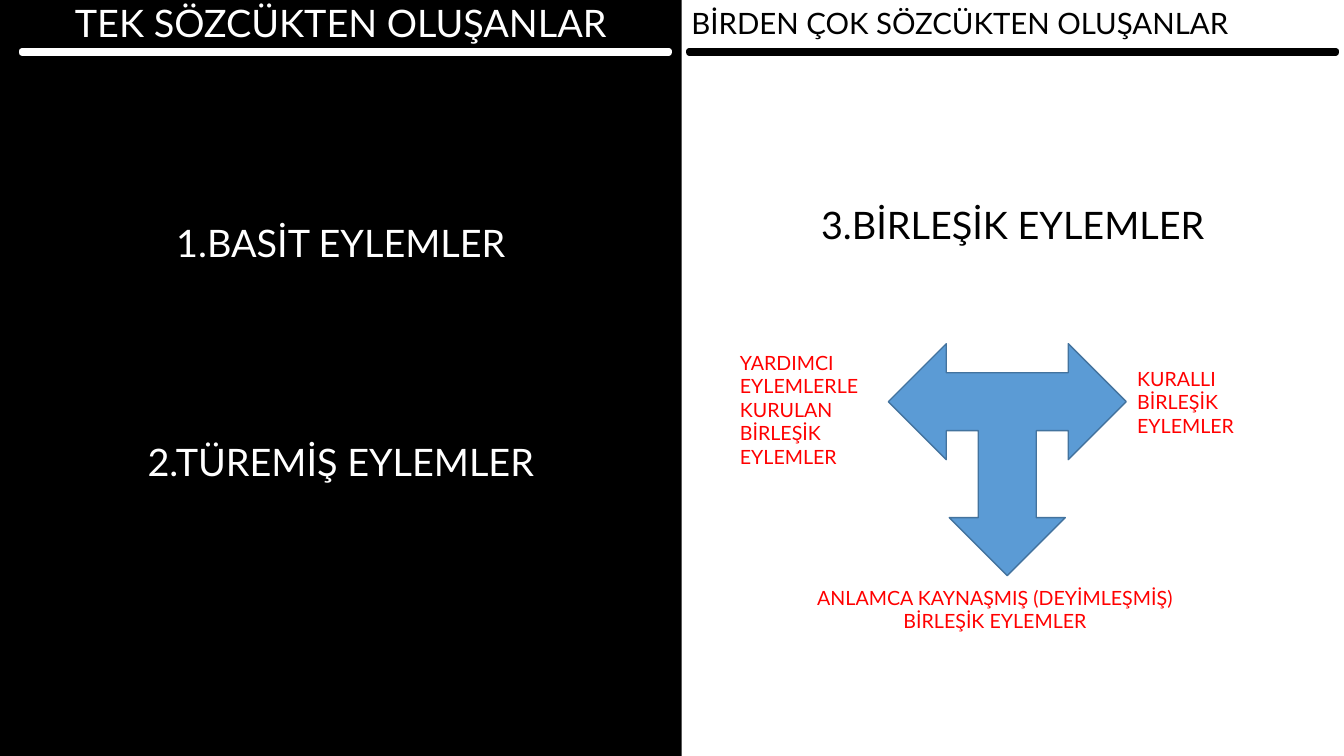
from pptx import Presentation
from pptx.dml.color import RGBColor
from pptx.enum.shapes import MSO_SHAPE
from pptx.enum.text import MSO_ANCHOR, MSO_AUTO_SIZE, PP_ALIGN
from pptx.util import Inches, Pt

FONT = "Lato"
BLACK, WHITE, RED = "000000", "FFFFFF", "FF0000"
ARROW_BLUE, ARROW_EDGE = "5B9BD5", "43739E"
LEFT, CENTER = PP_ALIGN.LEFT, PP_ALIGN.CENTER


def rgb(color):
    return RGBColor.from_string(color)


def write(shape, lines, color):
    """Each line is (text, size, alignment, line spacing, points before)."""
    tf = shape.text_frame
    frame_format = {"word_wrap": True, "auto_size": MSO_AUTO_SIZE.NONE,
                    "vertical_anchor": MSO_ANCHOR.TOP}
    for name, value in frame_format.items():
        setattr(tf, name, value)
    for i, (text, size, align, spacing, before) in enumerate(lines):
        p = tf.add_paragraph() if i else tf.paragraphs[0]
        paragraph_format = {"alignment": align, "line_spacing": spacing,
                            "space_before": Pt(before)}
        for name, value in paragraph_format.items():
            setattr(p, name, value)
        r = p.add_run()
        r.text = text
        for name, value in {"name": FONT, "size": Pt(size)}.items():
            setattr(r.font, name, value)
        r.font.color.rgb = rgb(color)


def add_text(s, box, lines, color):
    write(s.shapes.add_textbox(*map(Inches, box)), lines, color)


def add_label(s, box, lines, align=LEFT):
    add_text(s, box, [(text, 14, align, 1.0, 0) for text in lines], RED)


def add_figure(s, kind, box, fill, line, width, rotation=0):
    sp = s.shapes.add_shape(kind, *map(Inches, box))
    sp.shadow.inherit = False
    sp.rotation = rotation
    sp.fill.solid()
    sp.fill.fore_color.rgb = rgb(fill)
    sp.line.color.rgb = rgb(line)
    sp.line.width = Pt(width)


def fill_title_panel(s, box, lines):
    title = s.shapes.title
    for name, value in zip(("left", "top", "width", "height"), box):
        setattr(title, name, Inches(value))
    title.fill.solid()
    title.fill.fore_color.rgb = rgb(BLACK)
    write(title, lines, WHITE)


def main():
    prs = Presentation()
    prs.slide_width, prs.slide_height = Inches(13.33), Inches(7.5)
    s = prs.slides.add_slide(prs.slide_layouts[5])

    fill_title_panel(s, (0, 0, 6.76, 7.5), [
        ("TEK SÖZCÜKTEN OLUŞANLAR", 27, CENTER, 0.9, 0),
        ("1.BASİT EYLEMLER", 27, CENTER, 0.9, 127.5),
        ("2.TÜREMİŞ EYLEMLER", 27, CENTER, 0.9, 127.5),
    ])
    add_text(s, (6.76, 0, 6.57, 7.5), [
        ("BİRDEN ÇOK SÖZCÜKTEN OLUŞANLAR", 21, LEFT, 1.0, 0),
        ("3.BİRLEŞİK EYLEMLER", 27, CENTER, 1.0, 115),
    ], BLACK)

    for left, color in ((-0.94, WHITE), (5.68, BLACK)):
        add_figure(s, MSO_SHAPE.MATH_MINUS, (left, 0.49, 8.73, 0.05),
                   color, color, 4.5)

    add_figure(s, MSO_SHAPE.LEFT_RIGHT_UP_ARROW, (8.81, 3.41, 2.36, 2.3),
               ARROW_BLUE, ARROW_EDGE, 1, rotation=180)
    add_label(s, (7.24, 3.43, 1.73, 1.28),
              ["YARDIMCI EYLEMLERLE KURULAN BİRLEŞİK EYLEMLER"])
    add_label(s, (11.18, 3.59, 1.73, 0.81), ["KURALLI BİRLEŞİK EYLEMLER"])
    add_label(s, (7.87, 5.76, 4, 0.57),
              ["ANLAMCA KAYNAŞMIŞ (DEYİMLEŞMİŞ)", "BİRLEŞİK EYLEMLER"], CENTER)

    prs.save("out.pptx")


if __name__ == "__main__":
    main()
